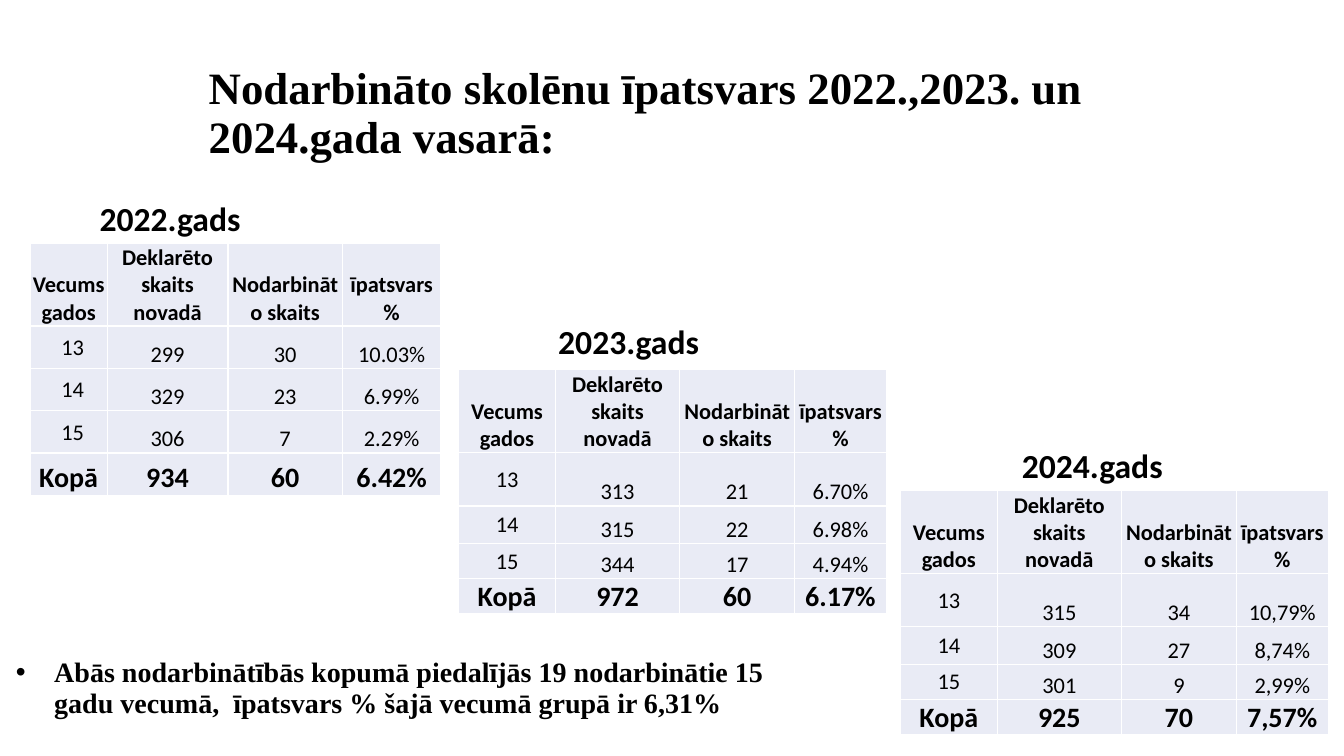
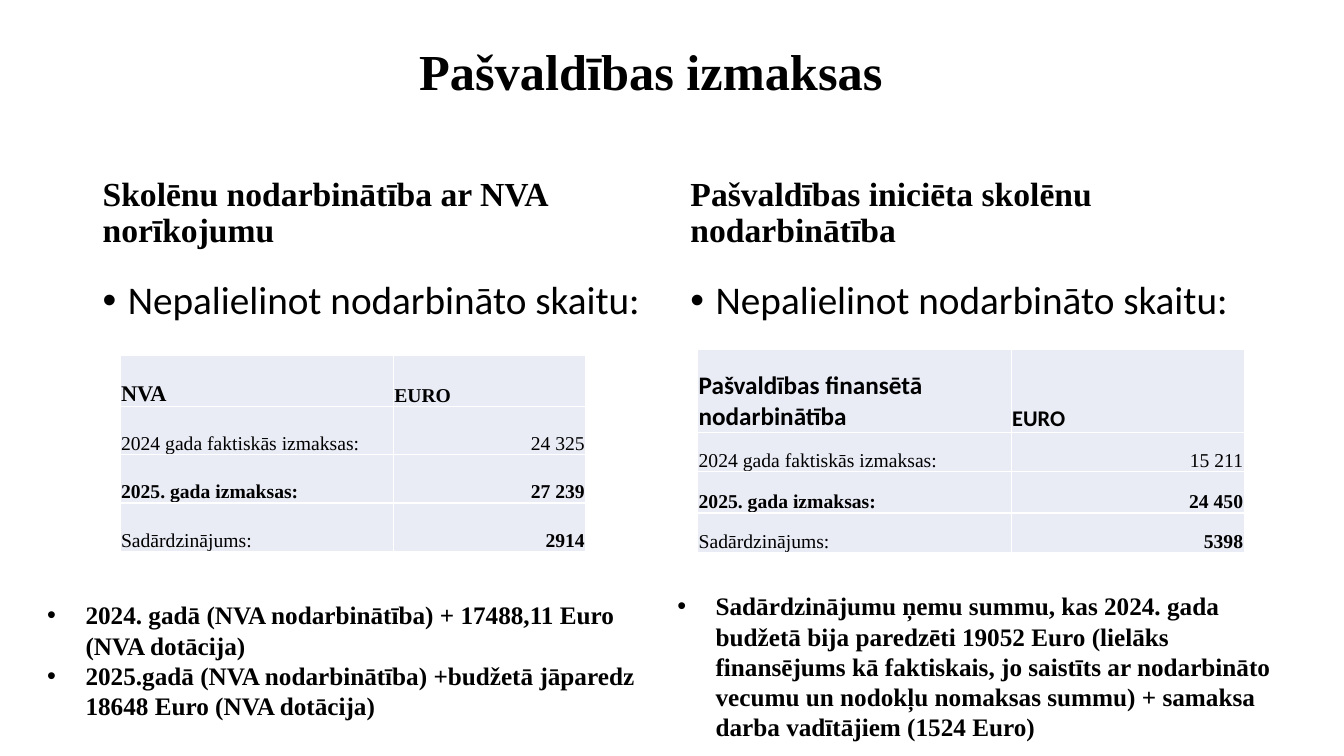
"""Build two slides on pupils' summer jobs: shares by year, and costs to the council."""
from lxml import etree
from pptx import Presentation
from pptx.dml.color import RGBColor
from pptx.enum.text import MSO_ANCHOR, MSO_AUTO_SIZE, PP_ALIGN
from pptx.oxml.ns import qn
from pptx.util import Inches, Pt

LEFT, MID, RIGHT = PP_ALIGN.LEFT, PP_ALIGN.CENTER, PP_ALIGN.RIGHT
TOP, CENTRE, BASE = MSO_ANCHOR.TOP, MSO_ANCHOR.MIDDLE, MSO_ANCHOR.BOTTOM
FIXED = MSO_AUTO_SIZE.NONE
SERIF, SANS = "Times New Roman", "Calibri"
INK, PALE = "000000", "E9EBF5"
TIGHT = Inches(0.01)

deck = Presentation()
deck.slide_width, deck.slide_height = Inches(13.33), Inches(7.5)
COL, ROW = deck.slide_width / 100, deck.slide_height / 100


def put(frame, lines, font, size, bold=True, align=LEFT, anchor=TOP, space=1.0, hang=0):
    """Write lines into a frame, with hanging bullets when hang is given."""
    frame.word_wrap = True
    frame.vertical_anchor = anchor
    for i, line in enumerate(lines):
        para = frame.add_paragraph() if i else frame.paragraphs[0]
        para.alignment, para.line_spacing = align, space
        if hang:
            props = para._p.get_or_add_pPr()
            props.set("marL", str(Inches(hang)))
            props.set("indent", str(-Inches(hang)))
            etree.SubElement(props, qn("a:buFont")).set("typeface", "Arial")
            etree.SubElement(props, qn("a:buChar")).set("char", "•")
        run = para.add_run()
        run.text = line
        run.font.name, run.font.size, run.font.bold = font, Pt(size), bold
        run.font.color.rgb = RGBColor.from_string(INK)


def grid(slide, x, y, cols, rows):
    """Add a pale table whose sizes are in grid columns and rows."""
    table = slide.shapes.add_table(
        len(rows), len(cols), int(x * COL), int(y * ROW),
        int(sum(cols) * COL), int(sum(rows) * ROW)).table
    table.first_row = table.horz_banding = False
    for c, wide in enumerate(cols):
        table.columns[c].width = int(wide * COL)
    for r, high in enumerate(rows):
        table.rows[r].height = int(high * ROW)
    for cell in table.iter_cells():
        cell.fill.solid()
        cell.fill.fore_color.rgb = RGBColor.from_string(PALE)
        cell.margin_left = cell.margin_right = cell.margin_top = TIGHT
        cell.margin_bottom = 0
        cell.vertical_anchor = BASE
    return table


TITLES = [
    ("Nodarbināto skolēnu īpatsvars 2022.,2023. un 2024.gada vasarā:",
     32, LEFT, (14.78, 3.6, 69.17, 23.07)),
    ("Pašvaldības izmaksas", 36, MID, (4.28, -2, 88.3, 23.73)),
]
slides = []
for text, size, align, (x, y, w, h) in TITLES:
    slide = deck.slides.add_slide(deck.slide_layouts[5])
    title = slide.shapes.title
    title.left, title.top = int(x * COL), int(y * ROW)
    title.width, title.height = int(w * COL), int(h * ROW)
    title.text_frame.auto_size = FIXED
    put(title.text_frame, [text], SERIF, size, align=align, anchor=CENTRE, space=0.9)
    slides.append(slide)
share, cost = slides

HEAD = ["Vecums gados", "Deklarēto skaits novadā", "Nodarbināto skaits", "īpatsvars %"]
SIDE = ["13", "14", "15", "Kopā"]
FIRST = [5.72, 9, 8.5, 7.35], [10.93] + [5.6] * 4, 0.09
LATER = [7.2, 9.25, 8.55, 6.83], [10.93, 7.07, 4.93, 4.67, 4.67], 0.01
YEARS = [
    ("2022.gads", 6.68, 25.47, 2.25, 32.13, FIRST,
     [["299", "30", "10.03%"], ["329", "23", "6.99%"],
      ["306", "7", "2.29%"], ["934", "60", "6.42%"]]),
    ("2023.gads", 40.8, 41.73, 34.13, 48.93, LATER,
     [["313", "21", "6.70%"], ["315", "22", "6.98%"],
      ["344", "17", "4.94%"], ["972", "60", "6.17%"]]),
    ("2024.gads", 75.3, 58.13, 67, 64.93, LATER,
     [["315", "34", "10,79%"], ["309", "27", "8,74%"],
      ["301", "9", "2,99%"], ["925", "70", "7,57%"]]),
]
for year, left, top, x, y, (cols, rows, inset), data in YEARS:
    table = grid(share, x, y, cols, rows)
    full = [HEAD] + [[age] + row for age, row in zip(SIDE, data)]
    last = len(full) - 1
    for r, row in enumerate(full):
        for c, text in enumerate(row):
            cell = table.cell(r, c)
            if c == 0 and 0 < r < last:
                cell.vertical_anchor = CENTRE
                cell.margin_left = Inches(inset)
            put(cell.text_frame, [text], SANS, 20 if r == last else 16,
                r in (0, last), MID, cell.vertical_anchor)
    label = share.shapes.add_textbox(
        int(left * COL), int(top * ROW), int(12.08 * COL), int(6.67 * ROW))
    put(label.text_frame, [year], SANS, 24)
    label.text_frame.word_wrap = False

COSTS = [
    (8.93, 47.07, [20.33, 14.33], [6.67, 6.4, 6.4, 6.4], "NVA", SERIF, 16, 14,
     ["24 325", "27 239", "2914"]),
    (51.91, 46.27, [23.33, 17.33], [10.93, 5.2, 5.47, 5.2],
     "Pašvaldības finansētā nodarbinātība", SANS, 18, 16,
     ["15 211", "24 450", "5398"]),
]
ITEMS = ["2024 gada faktiskās izmaksas:", "2025. gada izmaksas:", "Sadārdzinājums:"]
for x, y, cols, rows, name, font, big, small, sums in COSTS:
    table = grid(cost, x, y, cols, rows)
    put(table.cell(0, 0).text_frame, [name], font, big, anchor=BASE)
    put(table.cell(0, 1).text_frame, ["EURO"], font, small, anchor=BASE)
    for r, (item, total) in enumerate(zip(ITEMS, sums), 1):
        put(table.cell(r, 0).text_frame, [item], SERIF, 14, r == 2, anchor=BASE)
        put(table.cell(r, 1).text_frame, [total], SERIF, 14, r > 1, RIGHT, BASE)

POINT = ["Nepalielinot nodarbināto skaitu:"]
TEXTS = [
    (share, (0.45, 83.47, 57.54, 15.33),
     ["Abās nodarbinātībās kopumā piedalījās 19 nodarbinātie 15 gadu vecumā,  "
      "īpatsvars % šajā vecumā grupā ir 6,31%"],
     SERIF, 20, True, CENTRE, 0.9, 0.38),
    (cost, (6.9, 21.73, 42.3, 12), ["Skolēnu nodarbinātība ar NVA norīkojumu"],
     SERIF, 24, True, BASE, 0.9, 0),
    (cost, (50.64, 21.73, 42.5, 12), ["Pašvaldības iniciēta skolēnu nodarbinātība"],
     SERIF, 24, True, BASE, 0.9, 0),
    (cost, (6.9, 36.53, 42.3, 8), POINT, SANS, 28, False, TOP, 0.9, 0.25),
    (cost, (50.64, 36.53, 42.5, 8), POINT, SANS, 28, False, TOP, 0.9, 0.25),
    (cost, (2.78, 78.67, 46.14, 17.47),
     ["2024. gadā (NVA nodarbinātība) + 17488,11 Euro (NVA dotācija)",
      "2025.gadā (NVA nodarbinātība) +budžetā jāparedz 18648 Euro (NVA dotācija)"],
     SERIF, 18, True, TOP, 1.0, 0.38),
    (cost, (49.66, 77.47, 46.14, 21.6),
     ["Sadārdzinājumu ņemu summu, kas 2024. gada budžetā bija paredzēti 19052 Euro "
      "(lielāks finansējums kā faktiskais, jo saistīts ar nodarbināto vecumu un "
      "nodokļu nomaksas summu) + samaksa darba vadītājiem (1524 Euro)"],
     SERIF, 18, True, TOP, 1.0, 0.38),
]
for slide, (x, y, w, h), lines, font, size, bold, anchor, space, hang in TEXTS:
    box = slide.shapes.add_textbox(int(x * COL), int(y * ROW), int(w * COL), int(h * ROW))
    put(box.text_frame, lines, font, size, bold, LEFT, anchor, space, hang)

deck.save("out.pptx")
